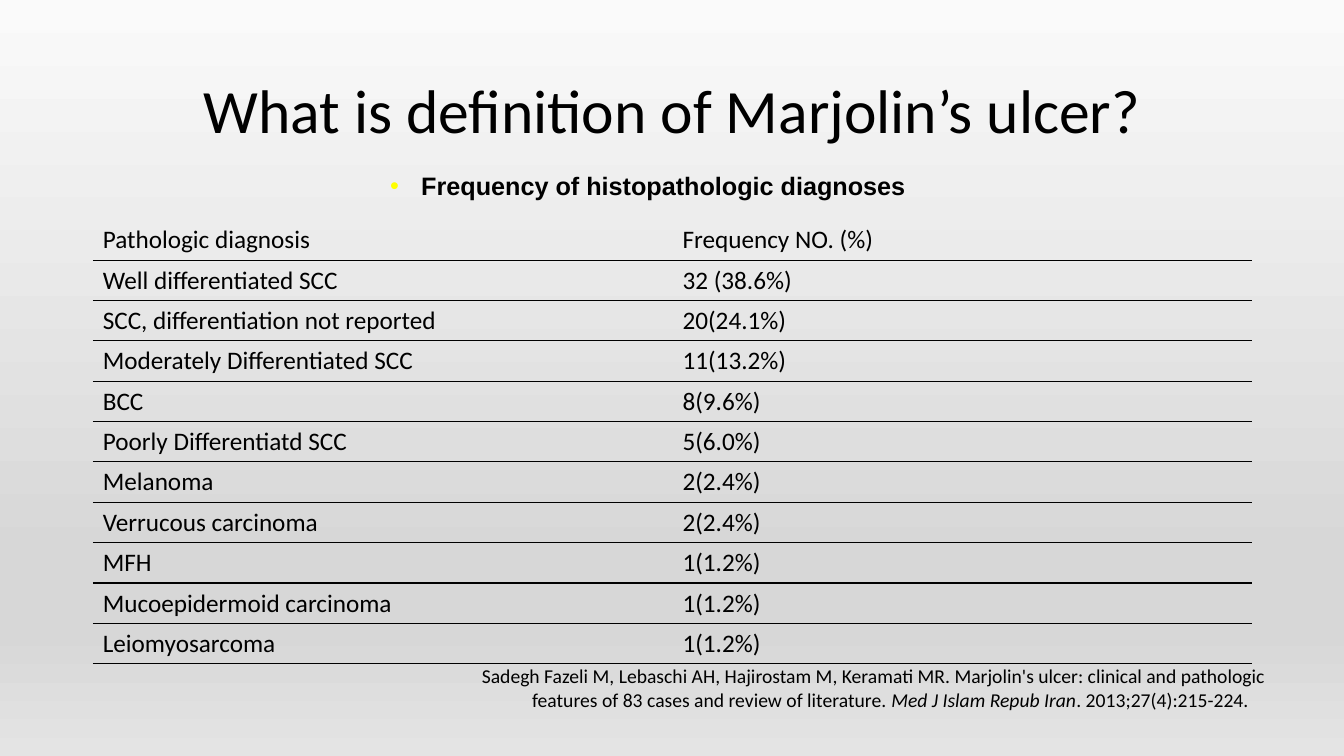
from pptx import Presentation
from pptx.dml.color import RGBColor
from pptx.enum import text as t
from pptx.oxml import parse_xml
from pptx.oxml.ns import nsdecls, qn
from pptx.util import Inches, Pt

BLACK = RGBColor(0x00, 0x00, 0x00)
YELLOW = RGBColor(0xFF, 0xFF, 0x00)
BACKDROP = [
    (0, RGBColor(0xFA, 0xFA, 0xFA)),
    (74, RGBColor(0xD7, 0xD7, 0xD7)),
    (83, RGBColor(0xD7, 0xD7, 0xD7)),
    (100, RGBColor(0xE4, 0xE4, 0xE4)),
]

HEADING = "What is definition of Marjolin’s ulcer?"
CAPTION = "Frequency of histopathologic diagnoses"
CITATION = [
    ("Sadegh Fazeli M, Lebaschi AH, Hajirostam M, Keramati MR. Marjolin's ulcer: "
     "clinical and pathologic features of 83 cases and review of literature. ", False),
    ("Med J Islam Repub Iran", True),
    (". 2013;27(4):215-224.", False),
]
DIAGNOSES = [
    ("Pathologic diagnosis", "Frequency NO. (%)"),
    ("Well differentiated SCC", "32 (38.6%)"),
    ("SCC, differentiation not reported", "20(24.1%)"),
    ("Moderately Differentiated SCC", "11(13.2%)"),
    ("BCC", "8(9.6%)"),
    ("Poorly Differentiatd SCC", "5(6.0%)"),
    ("Melanoma", "2(2.4%)"),
    ("Verrucous carcinoma", "2(2.4%)"),
    ("MFH", "1(1.2%)"),
    ("Mucoepidermoid carcinoma", "1(1.2%)"),
    ("Leiomyosarcoma", "1(1.2%)"),
]
LEFT, WIDTH, ROW_HEIGHT = 0.92, 11.5, 0.4
NO_STYLE = "{2D5ABB26-0587-4C30-8999-92F81FD0307C}"


def write(paragraph, content, size=18, font="Calibri", bold=False, italic=False):
    run = paragraph.add_run()
    run.text = content
    run.font.size = Pt(size)
    run.font.name = font
    run.font.bold = bold
    run.font.italic = italic
    run.font.color.rgb = BLACK


def hang(paragraph, indent, bullet=None):
    props = paragraph._p.get_or_add_pPr()
    props.set("marL", str(Inches(indent)))
    props.set("indent", str(-Inches(indent)))
    if bullet:
        props.append(parse_xml(
            f'<a:buClr {nsdecls("a")}><a:srgbClr val="{YELLOW}"/></a:buClr>'))
        props.append(parse_xml(f'<a:buFont {nsdecls("a")} typeface="Arial"/>'))
        props.append(parse_xml(f'<a:buChar {nsdecls("a")} char="{bullet}"/>'))


def underline_cell(cell):
    cell.fill.background()
    cell._tc.get_or_add_tcPr().insert(0, parse_xml(
        f'<a:lnB {nsdecls("a")} w="{Pt(1)}"><a:solidFill>'
        f'<a:srgbClr val="{BLACK}"/></a:solidFill></a:lnB>'))


def paint_background(slide):
    stops = "".join(
        f'<a:gs pos="{place * 1000}"><a:srgbClr val="{color}"/></a:gs>'
        for place, color in BACKDROP)
    slide.background.fill.gradient()
    props = slide.background._cSld.find(qn("p:bg")).find(qn("p:bgPr"))
    props.replace(props.find(qn("a:gradFill")), parse_xml(
        f'<a:gradFill {nsdecls("a")} rotWithShape="1"><a:gsLst>{stops}</a:gsLst>'
        '<a:lin ang="5400000" scaled="0"/></a:gradFill>'))


def main():
    deck = Presentation()
    deck.slide_width, deck.slide_height = Inches(13.33), Inches(7.5)
    slide = deck.slides.add_slide(deck.slide_layouts[5])
    paint_background(slide)

    heading = slide.shapes.title
    heading.left, heading.top = Inches(LEFT), Inches(0.4)
    heading.width, heading.height = Inches(WIDTH), Inches(1.45)
    heading.text_frame.vertical_anchor = t.MSO_ANCHOR.MIDDLE
    line = heading.text_frame.paragraphs[0]
    line.alignment = t.PP_ALIGN.CENTER
    line.line_spacing = 0.9
    write(line, HEADING, size=44)

    citation = slide.shapes.add_textbox(
        Inches(4.68), Inches(6.54), Inches(8.39), Inches(0.57)).text_frame
    citation.word_wrap = True
    citation.auto_size = t.MSO_AUTO_SIZE.SHAPE_TO_FIT_TEXT
    hang(citation.paragraphs[0], 0.5)
    for content, italic in CITATION:
        write(citation.paragraphs[0], content, size=14, italic=italic)

    caption = slide.shapes.add_textbox(
        Inches(3.77), Inches(1.64), Inches(5.37), Inches(0.4)).text_frame
    caption.word_wrap = False
    caption.auto_size = t.MSO_AUTO_SIZE.SHAPE_TO_FIT_TEXT
    caption.vertical_anchor = t.MSO_ANCHOR.MIDDLE
    hang(caption.paragraphs[0], 0.31, bullet="•")
    write(caption.paragraphs[0], CAPTION, font="Arial", bold=True)

    diagnoses = slide.shapes.add_table(
        len(DIAGNOSES), 2, Inches(LEFT), Inches(2.18),
        Inches(WIDTH), Inches(ROW_HEIGHT * len(DIAGNOSES))).table
    diagnoses.first_row = diagnoses.horz_banding = False
    diagnoses._tbl.tblPr.find(qn("a:tableStyleId")).text = NO_STYLE
    for row, entry in enumerate(DIAGNOSES):
        for column, content in enumerate(entry):
            cell = diagnoses.cell(row, column)
            underline_cell(cell)
            write(cell.text_frame.paragraphs[0], content)

    deck.save("out.pptx")


if __name__ == "__main__":
    main()
